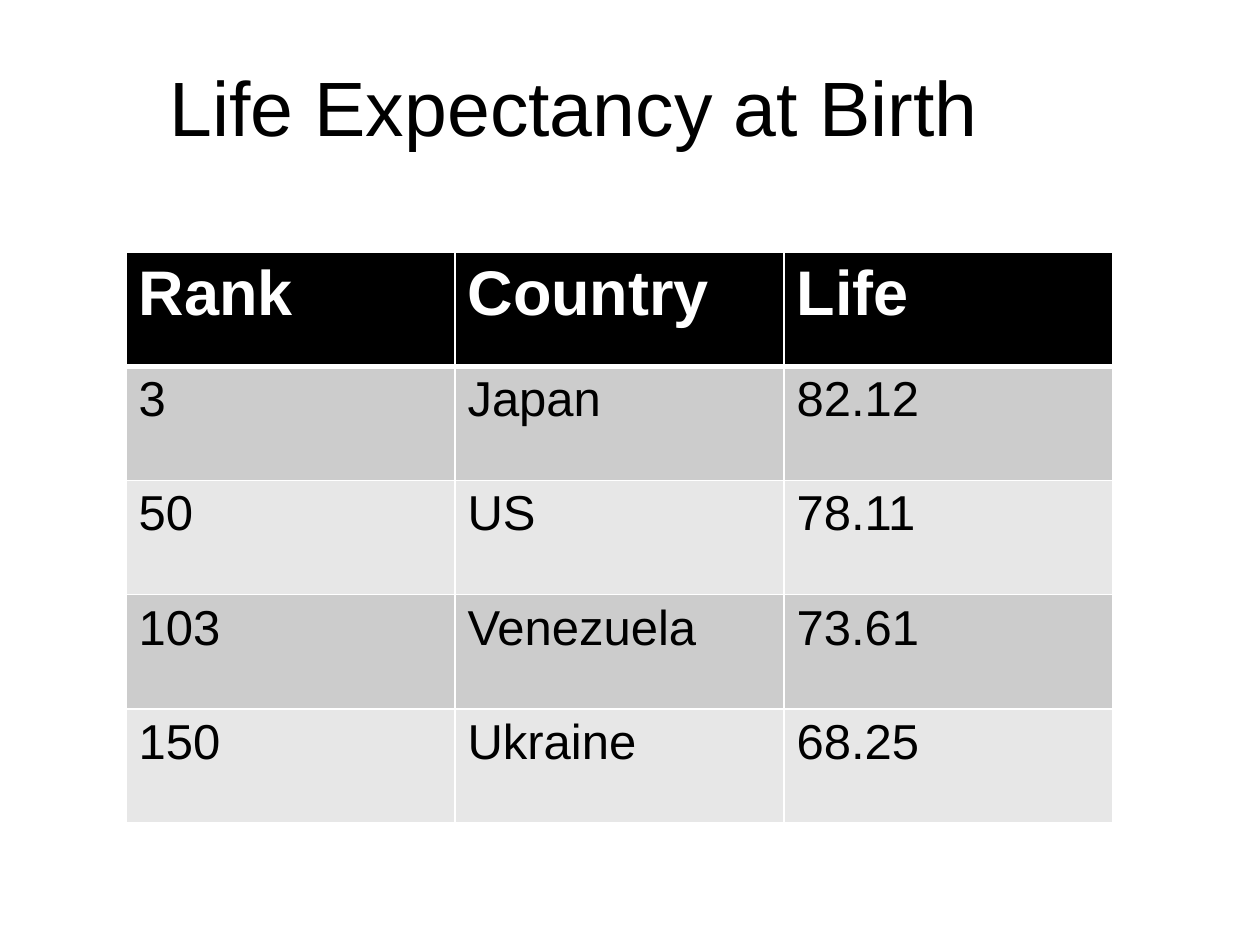
from lxml import etree
from pptx import Presentation
from pptx.dml.color import RGBColor
from pptx.enum.text import MSO_AUTO_SIZE
from pptx.oxml.ns import qn
from pptx.util import Pt

PX = 914400 / 126
FONT = "Arial"
FIT_SHAPE = MSO_AUTO_SIZE.SHAPE_TO_FIT_TEXT
COLORS = {
    "text": "000000",
    "header": "000000",
    "header_text": "FFFFFF",
    "band_dark": "CCCCCC",
    "band_light": "E7E7E7",
    "border": "FFFFFF",
}
ROWS = [
    ("Rank", "Country", "Life"),
    ("3", "Japan", "82.12"),
    ("50", "US", "78.11"),
    ("103", "Venezuela", "73.61"),
    ("150", "Ukraine", "68.25"),
]


def px(n):
    return round(n * PX)


def rgb(name):
    return RGBColor.from_string(COLORS[name])


def style_text(tf, size, color, bold=False):
    for r in tf.paragraphs[0].runs:
        r.font.name = FONT
        r.font.size = Pt(size)
        r.font.bold = bold
        r.font.color.rgb = rgb(color)


def set_borders(cell, top=1, bottom=1):
    tcPr = cell._tc.get_or_add_tcPr()
    for tag, width in (("lnL", 1), ("lnR", 1), ("lnT", top), ("lnB", bottom)):
        ln = etree.SubElement(tcPr, qn(f"a:{tag}"), w=str(Pt(width)))
        fill = etree.SubElement(ln, qn("a:solidFill"))
        etree.SubElement(fill, qn("a:srgbClr"), val=COLORS["border"])


def add_title(s, x, y, w, h):
    sp = s.shapes.add_textbox(px(x), px(y), px(w), px(h))
    tf = sp.text_frame
    tf.word_wrap = False
    tf.auto_size = FIT_SHAPE
    tf.text = "Life Expectancy at Birth"
    style_text(tf, 44, "text")


def add_life_table(s, x, y, w, h):
    frame = s.shapes.add_table(len(ROWS), len(ROWS[0]), px(x), px(y), px(w), px(h))
    table = frame.table
    for col in table.columns:
        col.width = px(w / len(ROWS[0]))
    for i, values in enumerate(ROWS):
        table.rows[i].height = px(h / len(ROWS))
        header = i == 0
        band = "header" if header else "band_dark" if i % 2 else "band_light"
        for j, value in enumerate(values):
            cell = table.cell(i, j)
            set_borders(cell, top=3 if i == 1 else 1, bottom=3 if header else 1)
            cell.fill.solid()
            cell.fill.fore_color.rgb = rgb(band)
            cell.text_frame.text = value
            style_text(cell.text_frame, 36 if header else 28,
                       "header_text" if header else "text", header)


def main():
    prs = Presentation()
    prs.slide_width, prs.slide_height = px(1260), px(945)
    s = prs.slides.add_slide(prs.slide_layouts[6])
    add_life_table(s, 126, 252, 987, 571)
    add_title(s, 157, 53, 843, 106)
    prs.save("out.pptx")


if __name__ == "__main__":
    main()
